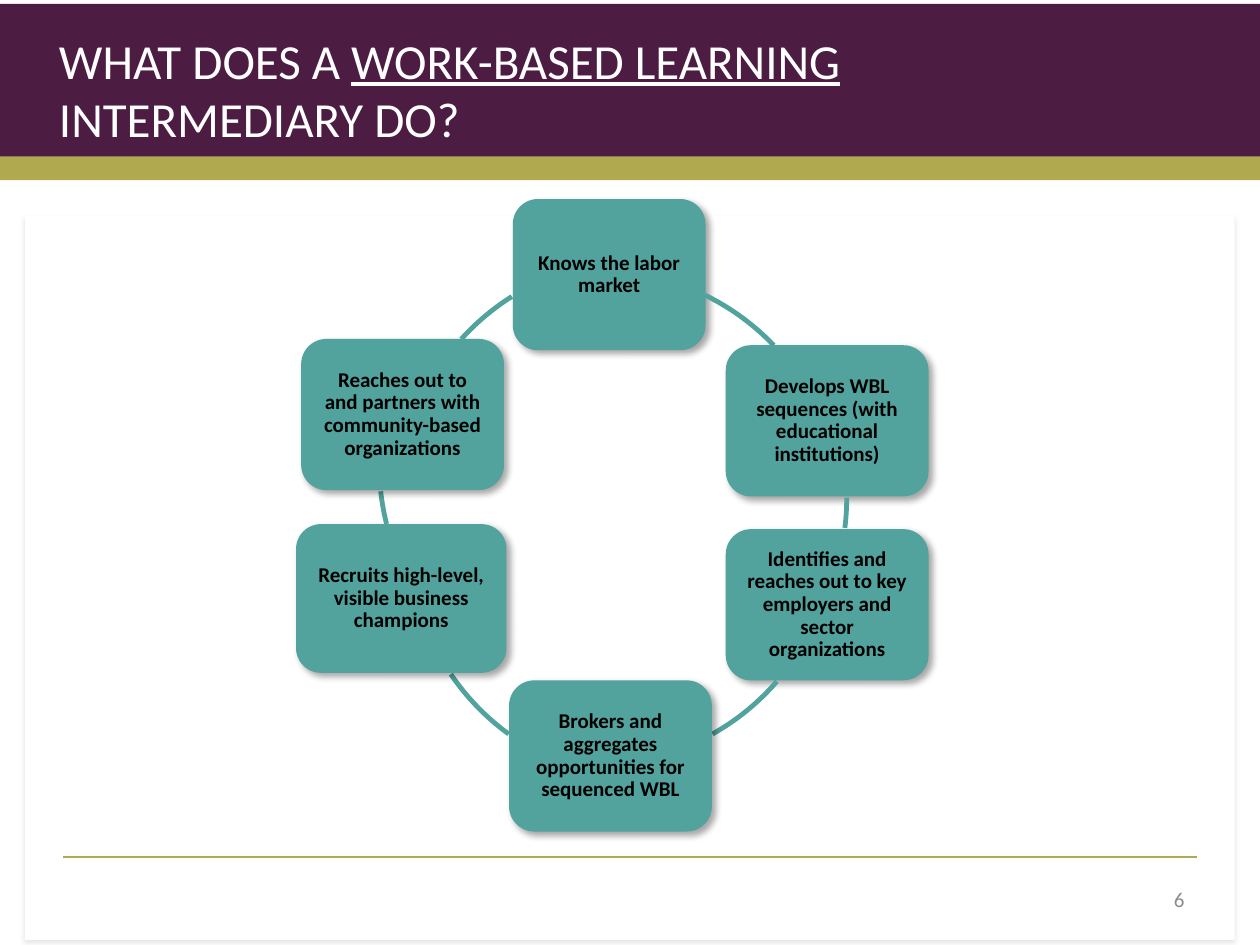
from dataclasses import dataclass

from lxml import etree
from pptx import Presentation
from pptx import util as u
from pptx.dml.color import RGBColor
from pptx.enum import shapes, text
from pptx.oxml.ns import qn

COLUMNS, ROWS = 100, 75  # square grid over the slide
PLUM, OLIVE, TEAL = "4D1C43", "B0A94F", "52A29D"
WHITE, BLACK, GRAY = "FFFFFF", "000000", "8C8C8C"
RING = 38.2  # diameter of the circle the arcs belong to
NODE_INSET = 1.1

prs = Presentation()
prs.slide_width, prs.slide_height = u.Inches(10), u.Inches(7.5)
slide = prs.slides.add_slide(prs.slide_layouts[6])


@dataclass
class Box:
    left: float
    top: float
    width: float
    height: float


@dataclass
class Shadow:
    opacity: int
    blur: float
    distance: float
    angle: int


@dataclass
class Arc:
    """Stretch of a ring, in degrees clockwise from the right."""
    left: float
    top: float
    start: float
    end: float


@dataclass
class Role:
    label: str
    box: Box
    link: Arc  # leads on to the next role


NODE_SHADOW = Shadow(35, 4, 3, 45)
PANEL_SHADOW = Shadow(10, 3.1, 1.8, 90)

ROLES = [
    Role("Knows the labor market",
         Box(40.7, 15.8, 15.3, 12), Arc(28.5, 21.5, 296, 316.3)),
    Role("Develops WBL sequences (with educational institutions)",
         Box(57.6, 27.4, 16.1, 12), Arc(29, 20.4, 0, 7.2)),
    Role("Identifies and reaches out to key employers and sector organizations",
         Box(57.6, 42, 16.1, 12), Arc(28.1, 22.5, 40.8, 60.7)),
    Role("Brokers and aggregates opportunities for sequenced WBL",
         Box(40.4, 54, 16.1, 12), Arc(32.5, 23.7, 126, 145.9)),
    Role("Recruits high-level, visible business champions",
         Box(23.5, 41.6, 16.7, 11.8), Arc(30.1, 17.8, 165.8, 173.7)),
    Role("Reaches out to and partners with community-based organizations",
         Box(23.9, 26.9, 16.1, 12), Arc(31.7, 20.6, 222, 237.8)),
]


def x(columns: float) -> int:
    return round(prs.slide_width * columns / COLUMNS)


def y(rows: float) -> int:
    return round(prs.slide_height * rows / ROWS)


def place(box: Box) -> tuple[int, int, int, int]:
    return x(box.left), y(box.top), x(box.width), y(box.height)


def color(value: str) -> RGBColor:
    return RGBColor.from_string(value)


def cast_shadow(shape, shadow: Shadow) -> None:
    effects = shape._element.spPr.find(qn("a:effectLst"))
    outer = etree.SubElement(
        effects, qn("a:outerShdw"), blurRad=str(u.Pt(shadow.blur)),
        dist=str(u.Pt(shadow.distance)), dir=str(shadow.angle * 60000),
        algn="ctr", rotWithShape="0")
    tint = etree.SubElement(outer, qn("a:srgbClr"), val=BLACK)
    etree.SubElement(tint, qn("a:alpha"), val=str(shadow.opacity * 1000))


def add_block(kind, box: Box, fill: str, shadow: Shadow | None = None):
    block = slide.shapes.add_shape(kind, *place(box))
    block.shadow.inherit = False
    block.fill.solid()
    block.fill.fore_color.rgb = color(fill)
    block.line.fill.background()
    if shadow:
        cast_shadow(block, shadow)
    return block


def add_run(paragraph, words: str, size: float, ink: str,
            bold: bool = False, underline: bool = False) -> None:
    run = paragraph.add_run()
    run.text = words
    run.font.name, run.font.size = "Calibri", u.Pt(size)
    run.font.bold, run.font.underline = bold, underline
    run.font.color.rgb = color(ink)


def middle_paragraph(shape, align):
    """Wrap and vertically centre the text; return the first paragraph."""
    frame = shape.text_frame
    frame.word_wrap = True
    frame.vertical_anchor = text.MSO_ANCHOR.MIDDLE
    paragraph = frame.paragraphs[0]
    paragraph.alignment = align
    return paragraph


def add_role(role: Role) -> None:
    node = add_block(shapes.MSO_SHAPE.ROUNDED_RECTANGLE, role.box, TEAL,
                     NODE_SHADOW)
    paragraph = middle_paragraph(node, text.PP_ALIGN.CENTER)
    paragraph.line_spacing = 0.9
    frame = node.text_frame
    frame.margin_left = frame.margin_right = x(NODE_INSET)
    frame.margin_top = frame.margin_bottom = y(NODE_INSET)
    add_run(paragraph, role.label, 12, BLACK, bold=True)


def add_link(arc: Arc) -> None:
    link = slide.shapes.add_shape(
        shapes.MSO_SHAPE.ARC, *place(Box(arc.left, arc.top, RING, RING)))
    link.shadow.inherit = False
    # Angles are stored in 1/60000 degree, adjustments in units of 100000.
    link.adjustments[0] = arc.start * 0.6
    link.adjustments[1] = arc.end * 0.6
    link.fill.background()
    link.line.color.rgb = color(TEAL)
    link.line.width = u.Pt(2.75)


def add_rule(left: float, right: float, row: float) -> None:
    rule = slide.shapes.add_connector(
        shapes.MSO_CONNECTOR.STRAIGHT, x(left), y(row), x(right), y(row))
    rule.line.color.rgb = color(OLIVE)
    rule.line.width = u.Pt(1)
    etree.SubElement(rule._element.spPr, qn("a:effectLst"))


def add_title() -> None:
    title = slide.shapes.add_textbox(*place(Box(3.7, 1.6, 70.6, 10.9)))
    paragraph = middle_paragraph(title, text.PP_ALIGN.LEFT)
    add_run(paragraph, "WHAT DOES A ", 28, WHITE)
    add_run(paragraph, "WORK-BASED LEARNING ", 28, WHITE, underline=True)
    add_run(paragraph, "INTERMEDIARY DO?", 28, WHITE)


def add_page_number() -> None:
    number = slide.shapes.add_textbox(*place(Box(71.7, 69.4, 23.3, 4)))
    add_run(middle_paragraph(number, text.PP_ALIGN.RIGHT), "6", 12, GRAY)


def main() -> None:
    rectangle = shapes.MSO_SHAPE.RECTANGLE
    add_block(rectangle, Box(0, 0.3, COLUMNS, 12.5), PLUM)
    add_block(rectangle, Box(0, 12.4, COLUMNS, 1.9), OLIVE)
    add_block(rectangle, Box(2, 17.1, 96, 57.5), WHITE, PANEL_SHADOW)
    add_rule(5, 95, 68)
    for role in ROLES:
        add_role(role)
        add_link(role.link)
    add_page_number()
    add_title()
    prs.save("out.pptx")


if __name__ == "__main__":
    main()
